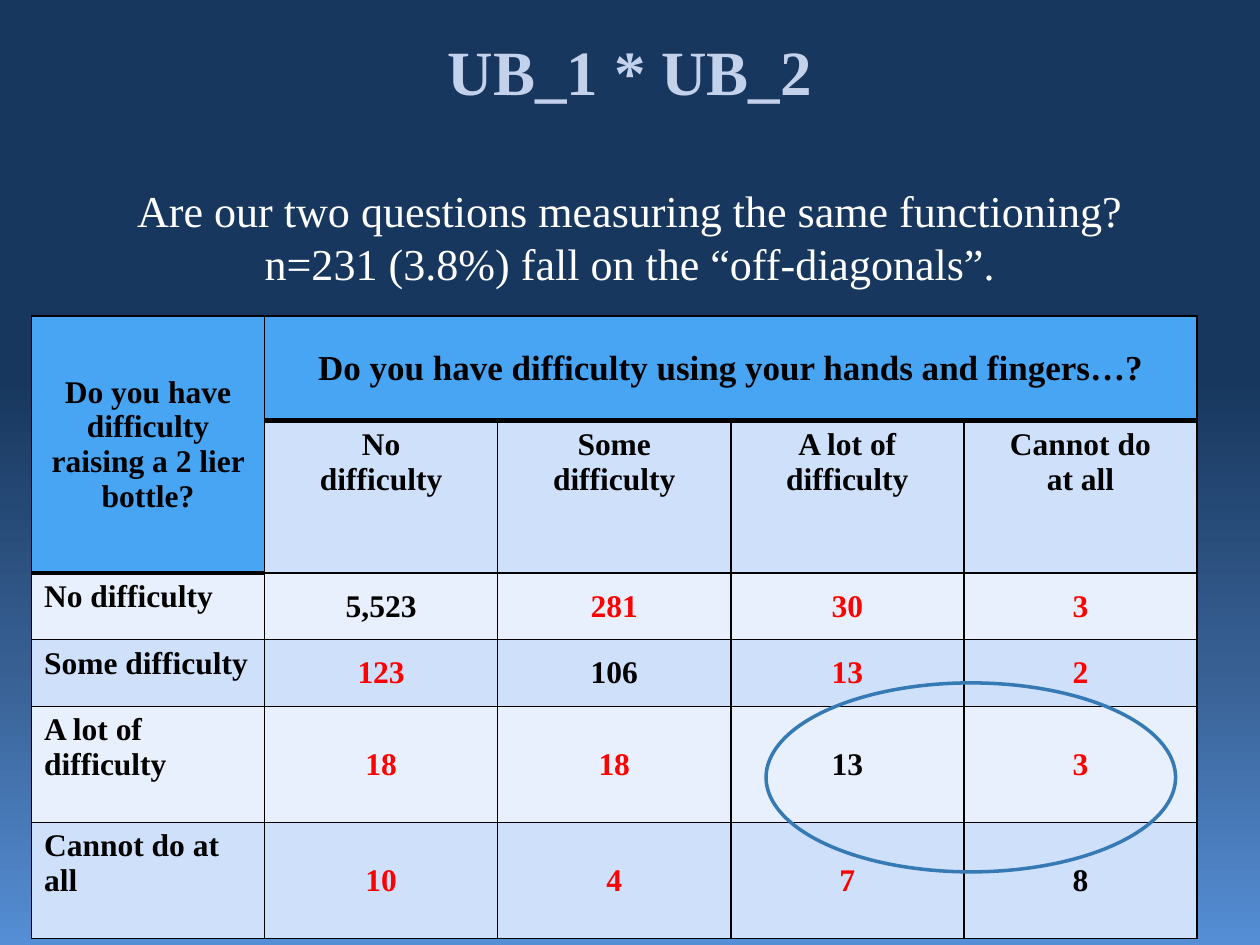
from copy import deepcopy

from lxml import etree
from pptx import Presentation
from pptx import util as u
from pptx.dml.color import RGBColor
from pptx.enum import shapes, text
from pptx.oxml import ns

FONT = "Times New Roman"
BLACK = RGBColor(0x00, 0x00, 0x00)
WHITE = RGBColor(0xFF, 0xFF, 0xFF)
RED = RGBColor(0xFF, 0x00, 0x00)
PALE_TITLE = RGBColor(0xC4, 0xD1, 0xEB)
HEADER_BLUE = RGBColor(0x47, 0xA5, 0xF3)
BAND_DARK = RGBColor(0xCF, 0xE1, 0xFA)
BAND_LIGHT = RGBColor(0xE9, 0xF0, 0xFD)
RING_BLUE = RGBColor(0x35, 0x7A, 0xB4)
NAVY = RGBColor(0x17, 0x37, 0x5E)
MID_BLUE = RGBColor(0x37, 0x5F, 0x92)
SKY_BLUE = RGBColor(0x55, 0x8E, 0xD5)

BACKGROUND_STOPS = [(0, NAVY), (0.4, NAVY), (0.7, MID_BLUE), (1, SKY_BLUE)]
COLUMN_WIDTH = 1.85
ROW_HEIGHTS = [0.83, 0.83, 0.53, 0.53, 0.92, 0.92]
HEADER_ROWS = 2
ROWS = [
    ["Do you have difficulty raising a 2 lier bottle?",
     "Do you have difficulty using your hands and fingers…?", "", "", ""],
    ["", "No\vdifficulty", "Some\vdifficulty", "A lot of difficulty", "Cannot do\vat all"],
    ["No difficulty", "5,523", "281", "30", "3"],
    ["Some difficulty", "123", "106", "13", "2"],
    ["A lot of difficulty", "18", "18", "13", "3"],
    ["Cannot do at all", "10", "4", "7", "8"],
]


def paint_background(slide):
    fill = slide.background.fill
    fill.gradient()
    fill.gradient_angle = 270
    stop_list = slide.element.find(".//" + ns.qn("a:gsLst"))
    while len(stop_list) < len(BACKGROUND_STOPS):
        stop_list.append(deepcopy(stop_list[0]))
    for stop, (position, color) in zip(fill.gradient_stops, BACKGROUND_STOPS):
        stop.position = position
        stop.color.rgb = color


def format_paragraph(paragraph, size, color, bold, alignment):
    paragraph.alignment = alignment
    for run in paragraph.runs:
        run.font.name = FONT
        run.font.size = u.Pt(size)
        run.font.color.rgb = color
        run.font.bold = bold


def add_title(slide):
    title = slide.shapes.title
    title.left, title.top, title.width, title.height = map(u.Inches, (0.5, 0.92, 9, 1.25))
    frame = title.text_frame
    frame.auto_size = text.MSO_AUTO_SIZE.NONE
    frame.word_wrap = True
    frame.vertical_anchor = text.MSO_ANCHOR.MIDDLE
    frame.margin_bottom = u.Inches(0.58)
    heading = frame.paragraphs[0]
    heading.text = "UB_1 * UB_2"
    format_paragraph(heading, 36, PALE_TITLE, True, text.PP_ALIGN.CENTER)
    question = frame.add_paragraph()
    question.text = ("Are our two questions measuring the same functioning?\v"
                     "n=231 (3.8%) fall on the “off-diagonals”.")
    question.space_before = u.Pt(43)
    format_paragraph(question, 25.2, WHITE, False, text.PP_ALIGN.CENTER)


def set_border(cell, side, width):
    properties = cell._tc.get_or_add_tcPr()
    line = etree.SubElement(properties, ns.qn("a:ln" + side), w=str(u.Pt(width)))
    fill = etree.SubElement(line, ns.qn("a:solidFill"))
    etree.SubElement(fill, ns.qn("a:srgbClr"), val=str(BLACK))


def rule_width(edge, column):
    header_end = HEADER_ROWS if column == 0 else 1
    return 3 if edge == header_end else 1


def cell_fill(row, column):
    if row == 0 or (row < HEADER_ROWS and column == 0):
        return HEADER_BLUE
    return BAND_DARK if row % 2 else BAND_LIGHT


def format_cell(cell, row, column):
    set_border(cell, "L", 1)
    set_border(cell, "R", 1)
    set_border(cell, "T", rule_width(row, column))
    set_border(cell, "B", rule_width(row + cell.span_height, column))
    cell.fill.solid()
    cell.fill.fore_color.rgb = cell_fill(row, column)

    is_value = row >= HEADER_ROWS and column > 0
    is_label = row >= HEADER_ROWS and column == 0
    off_diagonal = is_value and row - HEADER_ROWS != column - 1
    cell.vertical_anchor = (text.MSO_ANCHOR.MIDDLE if row == 0 or is_value
                            else text.MSO_ANCHOR.TOP)
    format_paragraph(
        cell.text_frame.paragraphs[0],
        20 if row == 0 and column > 0 else 18,
        RED if off_diagonal else BLACK,
        True,
        text.PP_ALIGN.LEFT if is_label else text.PP_ALIGN.CENTER,
    )


def add_crosstab(slide):
    column_count = len(ROWS[0])
    table = slide.shapes.add_table(
        len(ROWS), column_count, u.Inches(0.25), u.Inches(2.51),
        u.Inches(COLUMN_WIDTH * column_count), u.Inches(sum(ROW_HEIGHTS))).table
    for column in table.columns:
        column.width = u.Inches(COLUMN_WIDTH)
    for row, height in zip(table.rows, ROW_HEIGHTS):
        row.height = u.Inches(height)
    table.cell(0, 0).merge(table.cell(HEADER_ROWS - 1, 0))
    table.cell(0, 1).merge(table.cell(0, column_count - 1))
    for row, values in enumerate(ROWS):
        for column, value in enumerate(values):
            cell = table.cell(row, column)
            if value:
                cell.text_frame.text = value
            format_cell(cell, row, column)


def add_ring(slide):
    ring = slide.shapes.add_shape(
        shapes.MSO_SHAPE.OVAL, *map(u.Inches, (6.08, 5.42, 3.25, 1.5)))
    ring.shadow.inherit = False
    ring.fill.background()
    ring.line.color.rgb = RING_BLUE
    ring.line.width = u.Pt(2)


def main():
    presentation = Presentation()
    presentation.slide_width = u.Inches(10)
    presentation.slide_height = u.Inches(7.5)
    slide = presentation.slides.add_slide(presentation.slide_layouts[5])
    paint_background(slide)
    add_title(slide)
    add_crosstab(slide)
    add_ring(slide)
    presentation.save("out.pptx")


if __name__ == "__main__":
    main()
